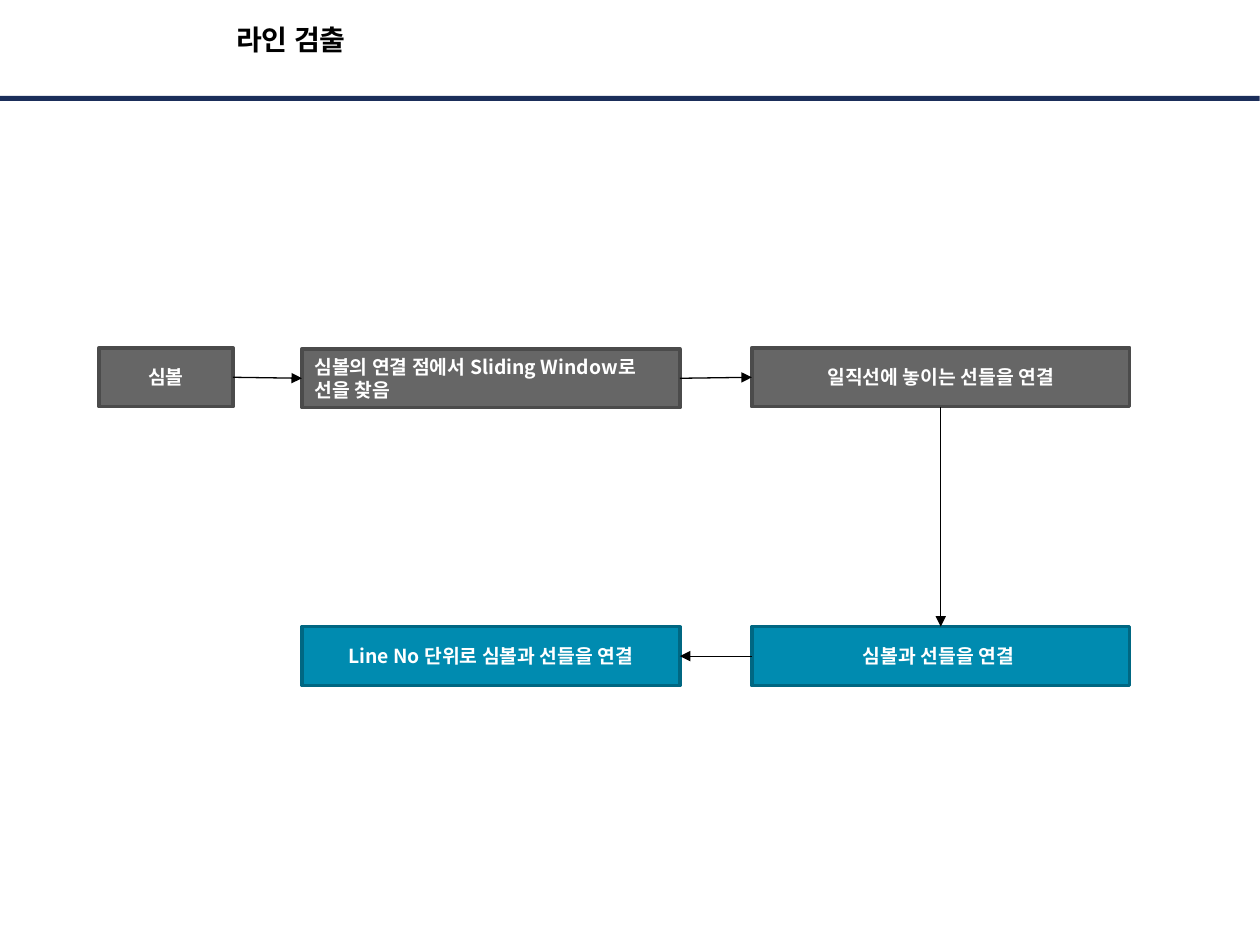
import pptx
import pptx.dml.color
import pptx.enum.shapes
import pptx.enum.text
import pptx.oxml.ns
import pptx.util

RGB = pptx.dml.color.RGBColor
NAVY = RGB(0x1B, 0x2E, 0x5A)
BLACK = RGB(0, 0, 0)
WHITE = RGB(0xFF, 0xFF, 0xFF)
GRAY = RGB(0x66, 0x66, 0x66)
DARK = RGB(0x4B, 0x4B, 0x4B)
TEAL = RGB(0x00, 0x8B, 0xB0)
DEEP = RGB(0x00, 0x67, 0x82)
PX = 7234  # EMU in one px
KOREAN = "Noto Sans CJK KR"
RECT = pptx.enum.shapes.MSO_SHAPE.RECTANGLE
LINE = pptx.enum.shapes.MSO_CONNECTOR.STRAIGHT
ALIGN = pptx.enum.text.PP_ALIGN
MIDDLE = pptx.enum.text.MSO_ANCHOR.MIDDLE
TOP, LEFT, BOTTOM, RIGHT = range(4)
qn = pptx.oxml.ns.qn


def write(frame, text, size, font, color, align):
    para = frame.paragraphs[0]
    para.alignment = align
    for i, line in enumerate(text.split("\n")):
        if i:
            para.add_line_break()
        run = para.add_run()
        run.text = line
        run.font.name = font
        run.font.size = pptx.util.Pt(size)
        run.font.bold = True
        run.font.color.rgb = color
        props = run.font._element
        props.append(props.makeelement(qn("a:ea"), {"typeface": KOREAN}))


def rect(x, y, w, h, fill):
    shape = slide.shapes.add_shape(RECT, x * PX, y * PX, w * PX, h * PX)
    shape.shadow.inherit = False
    shape.fill.solid()
    shape.fill.fore_color.rgb = fill
    return shape


deck = pptx.Presentation()
deck.slide_width = pptx.util.Inches(9.97)
deck.slide_height = pptx.util.Inches(7.48)
slide = deck.slides.add_slide(deck.slide_layouts[6])

# Header
rule = rect(0, 96, 1260, 5, NAVY)
rule.line.fill.background()
title = slide.shapes.add_textbox(16 * PX, 16 * PX, 550 * PX, 60 * PX)
title.text_frame.word_wrap = True
write(title.text_frame, "라인 검출", 16, "Arial", BLACK, ALIGN.CENTER)

# Steps, in the order of the flow
steps = [
    (99, 348, 134, GRAY, DARK, ALIGN.CENTER, "심볼"),
    (302, 349, 378, GRAY, DARK, ALIGN.LEFT,
     "심볼의 연결 점에서 Sliding Window로\n선을 찾음"),
    (752, 348, 378, GRAY, DARK, ALIGN.CENTER, "일직선에 놓이는 선들을 연결"),
    (752, 627, 378, TEAL, DEEP, ALIGN.CENTER, "심볼과 선들을 연결 "),
    (302, 627, 378, TEAL, DEEP, ALIGN.CENTER, "Line No 단위로 심볼과 선들을 연결"),
]
boxes = []
for x, y, w, fill, edge, align, text in steps:
    box = rect(x, y, w, 59, fill)
    box.line.color.rgb = edge
    box.line.width = pptx.util.Pt(2)
    box.text_frame.word_wrap = True
    box.text_frame.vertical_anchor = MIDDLE
    write(box.text_frame, text, 11, KOREAN, WHITE, align)
    boxes.append(box)

# Arrows from each step to the next
sides = [(RIGHT, LEFT), (RIGHT, LEFT), (BOTTOM, TOP), (LEFT, RIGHT)]
for a, b, (start, end) in zip(boxes, boxes[1:], sides):
    arrow = slide.shapes.add_connector(LINE, 0, 0, 0, 0)
    arrow.begin_connect(a, start)
    arrow.end_connect(b, end)
    arrow.line.color.rgb = BLACK
    arrow.line.width = pptx.util.Pt(0.75)
    props = arrow._element.spPr
    stroke = props.find(qn("a:ln"))
    stroke.append(stroke.makeelement(qn("a:tailEnd"), {"type": "triangle"}))
    props.append(props.makeelement(qn("a:effectLst")))

deck.save("out.pptx")
